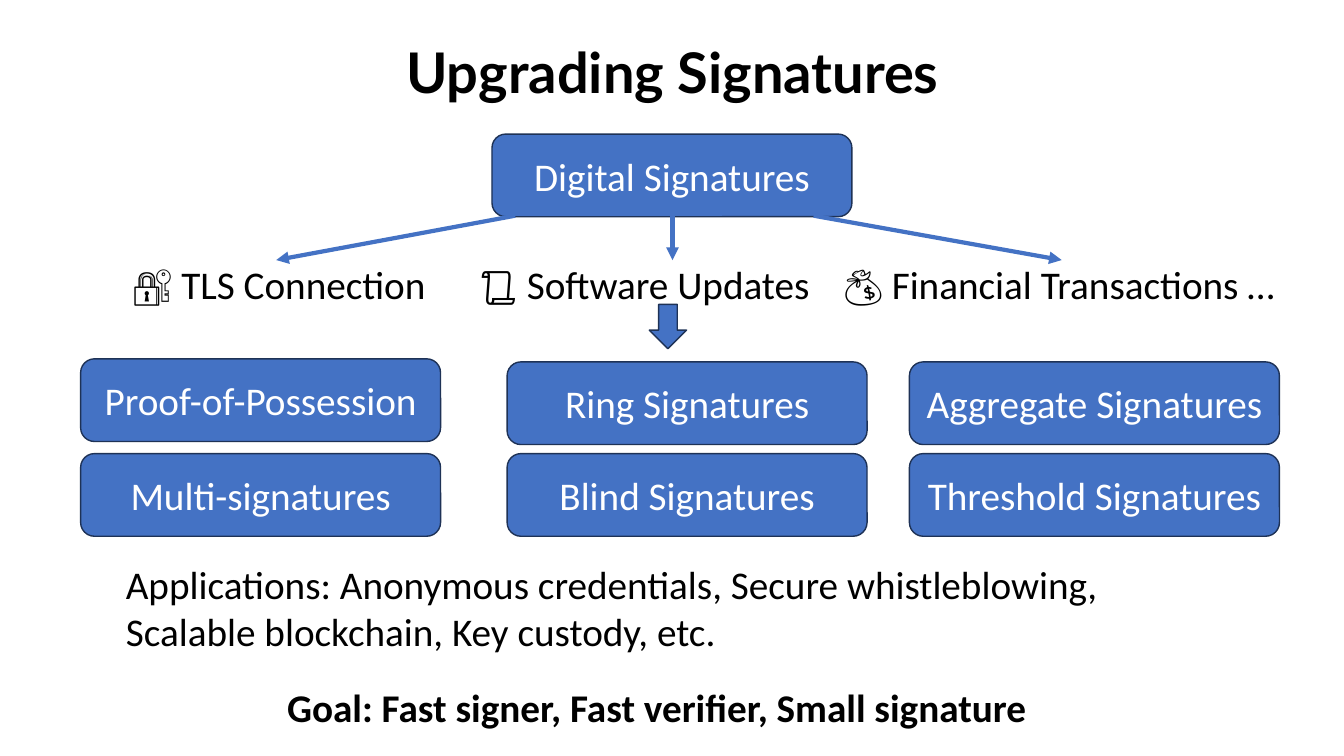
from lxml import etree
from pptx import Presentation
from pptx.dml.color import RGBColor
from pptx.enum.shapes import MSO_CONNECTOR as Line, MSO_SHAPE as Shape
from pptx.enum.text import MSO_ANCHOR as Anchor, PP_ALIGN as Align
from pptx.oxml.ns import qn
from pptx.util import Inches, Pt

BLUE, NAVY, BLACK, WHITE = "4472C4", "1E3256", "000000", "FFFFFF"


def color(value):
    return RGBColor.from_string(value)


def write(box, text, size=28, font="Calibri", ink=BLACK, bold=False,
          align=Align.LEFT, anchor=Anchor.TOP, spacing=None, tabs=()):
    frame = box.text_frame
    frame.word_wrap = True
    frame.vertical_anchor = anchor
    para = frame.paragraphs[0]
    para.alignment = align
    if spacing:
        para.line_spacing = spacing
    if tabs:
        stops = etree.SubElement(para._p.get_or_add_pPr(), qn("a:tabLst"))
        for stop in tabs:
            etree.SubElement(stops, qn("a:tab"), pos=str(Inches(stop)), algn="l")
    span = para.add_run()
    span.text = text
    span.font.name, span.font.size, span.font.bold = font, Pt(size), bold
    span.font.color.rgb = color(ink)


def add_text(page, left, top, width, height, text, **style):
    box = page.shapes.add_textbox(*map(Inches, (left, top, width, height)))
    write(box, text, **style)


def add_block(page, kind, left, top, width, height):
    block = page.shapes.add_shape(kind, *map(Inches, (left, top, width, height)))
    block.shadow.inherit = False
    block.fill.solid()
    block.fill.fore_color.rgb = color(BLUE)
    block.line.color.rgb = color(NAVY)
    block.line.width = Pt(1)
    return block


def add_scheme(page, left, top, width, text, height=0.82):
    block = add_block(page, Shape.FLOWCHART_ALTERNATE_PROCESS, left, top, width, height)
    write(block, text, ink=WHITE, align=Align.CENTER, anchor=Anchor.MIDDLE)


def add_arrow(page, x1, y1, x2, y2):
    arrow = page.shapes.add_connector(Line.STRAIGHT, *map(Inches, (x1, y1, x2, y2)))
    arrow.line.color.rgb = color(BLUE)
    arrow.line.width = Pt(3)
    etree.SubElement(arrow.line._get_or_add_ln(), qn("a:tailEnd"), type="triangle")
    etree.SubElement(arrow._element.spPr, qn("a:effectLst"))


def add_uses(page, left, top, width):
    """Root scheme with arrows down to its everyday uses."""
    add_text(page, left, top + 1.2, width, 0.88,
             "🔐 TLS Connection\t📜 Software Updates\t💰 Financial Transactions …",
             tabs=(3.43, 7.05))
    add_scheme(page, left + 3.66, top, 3.57, "Digital Signatures")
    for start, end in ((3.89, 1.52), (5.45, 5.45), (6.85, 9.31)):
        add_arrow(page, left + start, top + 0.81, left + end, top + 1.25)


def add_upgrades(page, left, top):
    """Block arrow above three columns of upgraded schemes."""
    add_block(page, Shape.DOWN_ARROW, left + 5.64, top - 0.57, 0.37, 0.44)
    columns = (
        (0, -0.03, 3.57, "Proof-of-Possession", "Multi-signatures"),
        (4.23, 0, 3.57, "Ring Signatures", "Blind Signatures"),
        (8.22, 0, 3.67, "Aggregate Signatures", "Threshold Signatures"),
    )
    for x, lift, width, upper, lower in columns:
        add_scheme(page, left + x, top + lift, width, upper)
        add_scheme(page, left + x, top + 0.91, width, lower)


def add_summary(page, left, top):
    """Applications and the closing goal."""
    add_text(page, left, top, 10.53, 1.04,
             "Applications: Anonymous credentials, Secure whistleblowing, "
             "Scalable blockchain, Key custody, etc.")
    add_text(page, left + 1.6, top + 1.22, 7.83, 0.57,
             "Goal: Fast signer, Fast verifier, Small signature", bold=True)


def main():
    deck = Presentation()
    deck.slide_width, deck.slide_height = Inches(13.33), Inches(7.5)
    page = deck.slides.add_slide(deck.slide_layouts[6])
    add_text(page, 0.92, 0.02, 11.5, 1.45, "Upgrading Signatures", size=40, font="Lato",
             bold=True, align=Align.CENTER, anchor=Anchor.MIDDLE, spacing=0.9)
    add_uses(page, 1.22, 1.33, 12.11)
    add_upgrades(page, 0.8, 3.59)
    add_summary(page, 1.15, 5.51)
    deck.save("out.pptx")


if __name__ == "__main__":
    main()
